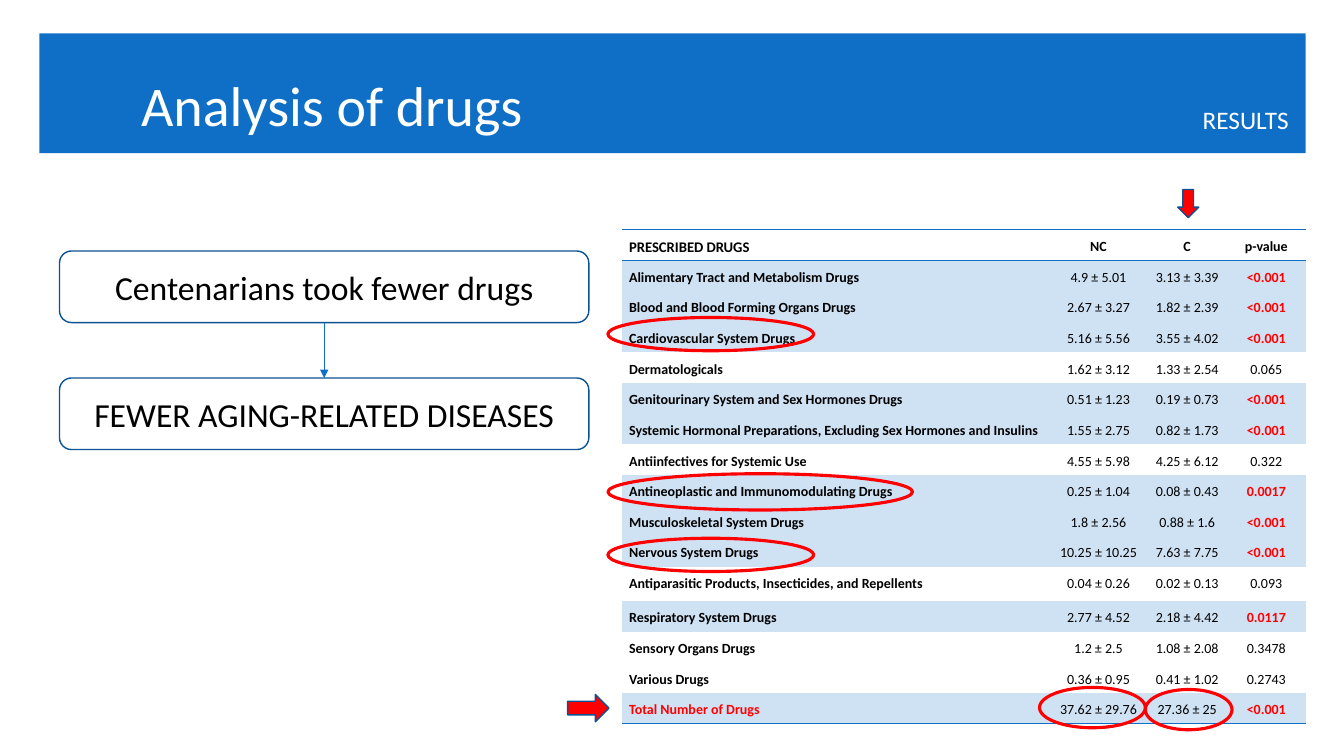
from dataclasses import dataclass

from lxml.etree import SubElement
from pptx import Presentation
from pptx.dml.color import RGBColor
from pptx.enum.shapes import MSO_CONNECTOR, MSO_SHAPE
from pptx.enum.text import MSO_ANCHOR, MSO_AUTO_SIZE, PP_ALIGN
from pptx.oxml.ns import qn
from pptx.util import Emu, Pt

PX = 9144  # 100 px to the inch


@dataclass(frozen=True)
class Theme:
    font: str = "Calibri"
    blue: str = "0F6FC6"
    outline: str = "0B5292"
    pale: str = "CFE2F4"
    red: str = "FF0000"
    black: str = "000000"
    white: str = "FFFFFF"
    title: float = 40
    statement: float = 24
    section: float = 18
    heading: float = 10.5
    cell: float = 10


THEME = Theme()
NO_TABLE_STYLE = "{2D5ABB26-0587-4C30-8999-92F81FD0307C}"

HEADER = ("PRESCRIBED DRUGS", "NC", "C", "p-value")
DRUGS = [
    ("Alimentary Tract and Metabolism Drugs", "4.9 ± 5.01", "3.13 ± 3.39", "<0.001"),
    ("Blood and Blood Forming Organs Drugs", "2.67 ± 3.27", "1.82 ± 2.39", "<0.001"),
    ("Cardiovascular System Drugs", "5.16 ± 5.56", "3.55 ± 4.02", "<0.001"),
    ("Dermatologicals", "1.62 ± 3.12", "1.33 ± 2.54", "0.065"),
    ("Genitourinary System and Sex Hormones Drugs", "0.51 ± 1.23", "0.19 ± 0.73", "<0.001"),
    ("Systemic Hormonal Preparations, Excluding Sex Hormones and Insulins",
     "1.55 ± 2.75", "0.82 ± 1.73", "<0.001"),
    ("Antiinfectives for Systemic Use", "4.55 ± 5.98", "4.25 ± 6.12", "0.322"),
    ("Antineoplastic and Immunomodulating Drugs", "0.25 ± 1.04", "0.08 ± 0.43", "0.0017"),
    ("Musculoskeletal System Drugs", "1.8 ± 2.56", "0.88 ± 1.6", "<0.001"),
    ("Nervous System Drugs", "10.25 ± 10.25", "7.63 ± 7.75", "<0.001"),
    ("Antiparasitic Products, Insecticides, and Repellents",
     "0.04 ± 0.26", "0.02 ± 0.13", "0.093"),
    ("Respiratory System Drugs", "2.77 ± 4.52", "2.18 ± 4.42", "0.0117"),
    ("Sensory Organs Drugs", "1.2 ± 2.5", "1.08 ± 2.08", "0.3478"),
    ("Various Drugs", "0.36 ± 0.95", "0.41 ± 1.02", "0.2743"),
    ("Total Number of Drugs", "37.62 ± 29.76", "27.36 ± 25", "<0.001"),
]
COLUMN_WIDTHS = (424, 97, 79, 78)
TALL_ROW, TALL_HEIGHT = 11, 34


def px(*lengths):
    return [Emu(length * PX) for length in lengths]


def set_values(target, values):
    for name, value in values.items():
        setattr(target, name, value)


def write(frame, text, size, color, align=PP_ALIGN.LEFT, bold=False, **spacing):
    paragraph = frame.paragraphs[0]
    set_values(paragraph, {"alignment": align, **spacing})
    run = paragraph.add_run()
    run.text = text
    set_values(run.font, {"name": THEME.font, "size": Pt(size), "bold": bold})
    run.font.color.rgb = RGBColor.from_string(color)


def add_text(slide, box, text, size, align, frame_format, **spacing):
    frame = slide.shapes.add_textbox(*px(*box)).text_frame
    set_values(frame, {"word_wrap": True, **frame_format})
    write(frame, text, size, THEME.white, align, **spacing)


def add_figure(slide, kind, box, fill=None, line=None, width=1):
    shape = slide.shapes.add_shape(kind, *px(*box))
    shape.shadow.inherit = False
    if fill:
        shape.fill.solid()
        shape.fill.fore_color.rgb = RGBColor.from_string(fill)
    else:
        shape.fill.background()
    if line:
        shape.line.color.rgb = RGBColor.from_string(line)
        shape.line.width = Pt(width)
    else:
        shape.line.fill.background()
    return shape


def add_statement(slide, box, text):
    shape = add_figure(slide, MSO_SHAPE.ROUNDED_RECTANGLE, box, line=THEME.outline)
    set_values(shape.text_frame, {"word_wrap": True, "vertical_anchor": MSO_ANCHOR.MIDDLE})
    write(shape.text_frame, text, THEME.statement, THEME.black, PP_ALIGN.CENTER)
    return shape


def add_arrow(slide, upper, lower):
    arrow = slide.shapes.add_connector(MSO_CONNECTOR.STRAIGHT, 0, 0, 0, 0)
    arrow.begin_connect(upper, 2)
    arrow.end_connect(lower, 0)
    arrow.line.color.rgb = RGBColor.from_string(THEME.blue)
    arrow.line.width = Pt(0.5)
    SubElement(arrow.line._get_or_add_ln(), qn("a:tailEnd"), type="triangle")
    SubElement(arrow._element.spPr, qn("a:effectLst"))


def add_border(cell, side):
    line = SubElement(cell._tc.get_or_add_tcPr(), qn(f"a:ln{side}"), w=str(Pt(1)))
    fill = SubElement(line, qn("a:solidFill"))
    SubElement(fill, qn("a:srgbClr"), val=THEME.blue)


def fill_cell(cell, text, column, sides, shaded, **text_format):
    margin, = px(7)
    set_values(cell, {"margin_left": margin, "margin_right": margin,
                      "margin_top": 0, "margin_bottom": 0})
    for side in sides:
        add_border(cell, side)
    if shaded:
        cell.fill.solid()
        cell.fill.fore_color.rgb = RGBColor.from_string(THEME.pale)
    else:
        cell.fill.background()
    align = PP_ALIGN.CENTER if column else PP_ALIGN.JUSTIFY
    write(cell.text_frame, text, align=align, line_spacing=1.5,
          space_after=Pt(8), **text_format)


def add_drug_table(slide, left, top, height):
    rows = [HEADER, *DRUGS]
    frame = slide.shapes.add_table(len(rows), len(HEADER),
                                   *px(left, top, sum(COLUMN_WIDTHS), height))
    table = frame.table
    set_values(table, {"first_row": False, "horz_banding": False})
    table._tbl.tblPr.find(qn("a:tableStyleId")).text = NO_TABLE_STYLE
    for column, width in zip(table.columns, px(*COLUMN_WIDTHS)):
        column.width = width
    row_height = (height - TALL_HEIGHT) * PX // (len(rows) - 1)
    last = len(rows) - 1
    for index, values in enumerate(rows):
        table.rows[index].height = TALL_HEIGHT * PX if index == TALL_ROW else row_height
        # Significant rows are shaded, with the p-value in red
        significant = index > 0 and float(values[-1].lstrip("<")) < 0.05
        sides = {0: "TB", last: "B"}.get(index, "")
        for column, text in enumerate(values):
            red = significant and column == 3 or index == last and column == 0
            fill_cell(table.cell(index, column), text, column, sides, significant,
                      size=THEME.cell if index or column else THEME.heading,
                      color=THEME.red if red else THEME.black,
                      bold=index == 0 or column == 0 or red)


def main():
    presentation = Presentation()
    presentation.slide_width, presentation.slide_height = px(1333, 750)
    slide = presentation.slides.add_slide(presentation.slide_layouts[6])

    # Title band
    add_figure(slide, MSO_SHAPE.RECTANGLE, (39, 33, 1256, 119), fill=THEME.blue)
    inset, = px(13)
    margins = {f"margin_{side}": inset for side in ("left", "top", "right", "bottom")}
    add_text(slide, (127, 6, 476, 145), "Analysis of drugs", THEME.title, PP_ALIGN.LEFT,
             {"vertical_anchor": MSO_ANCHOR.BOTTOM, **margins}, line_spacing=0.9)
    add_text(slide, (1038, 99, 250, 40), "RESULTS", THEME.section, PP_ALIGN.RIGHT,
             {"auto_size": MSO_AUTO_SIZE.SHAPE_TO_FIT_TEXT})

    # Drug table
    add_drug_table(slide, 617, 228, 490)

    # Finding and its consequence
    finding = add_statement(slide, (59, 249, 525, 71), "Centenarians took fewer drugs")
    consequence = add_statement(slide, (59, 375, 525, 71), "FEWER AGING-RELATED DISEASES")
    add_arrow(slide, finding, consequence)

    # Red pointers to the total row and the C column
    for kind, box in ((MSO_SHAPE.RIGHT_ARROW, (563, 689, 41, 27)),
                      (MSO_SHAPE.DOWN_ARROW, (1168, 188, 21, 28))):
        add_figure(slide, kind, box, THEME.red, THEME.outline)

    # Red rings around key entries
    for box in ((1136, 684, 86, 40), (1031, 682, 105, 40), (603, 315, 204, 33),
                (603, 534, 204, 33), (603, 470, 302, 36)):
        add_figure(slide, MSO_SHAPE.OVAL, box, line=THEME.red, width=2.25)

    presentation.save("out.pptx")


if __name__ == "__main__":
    main()
